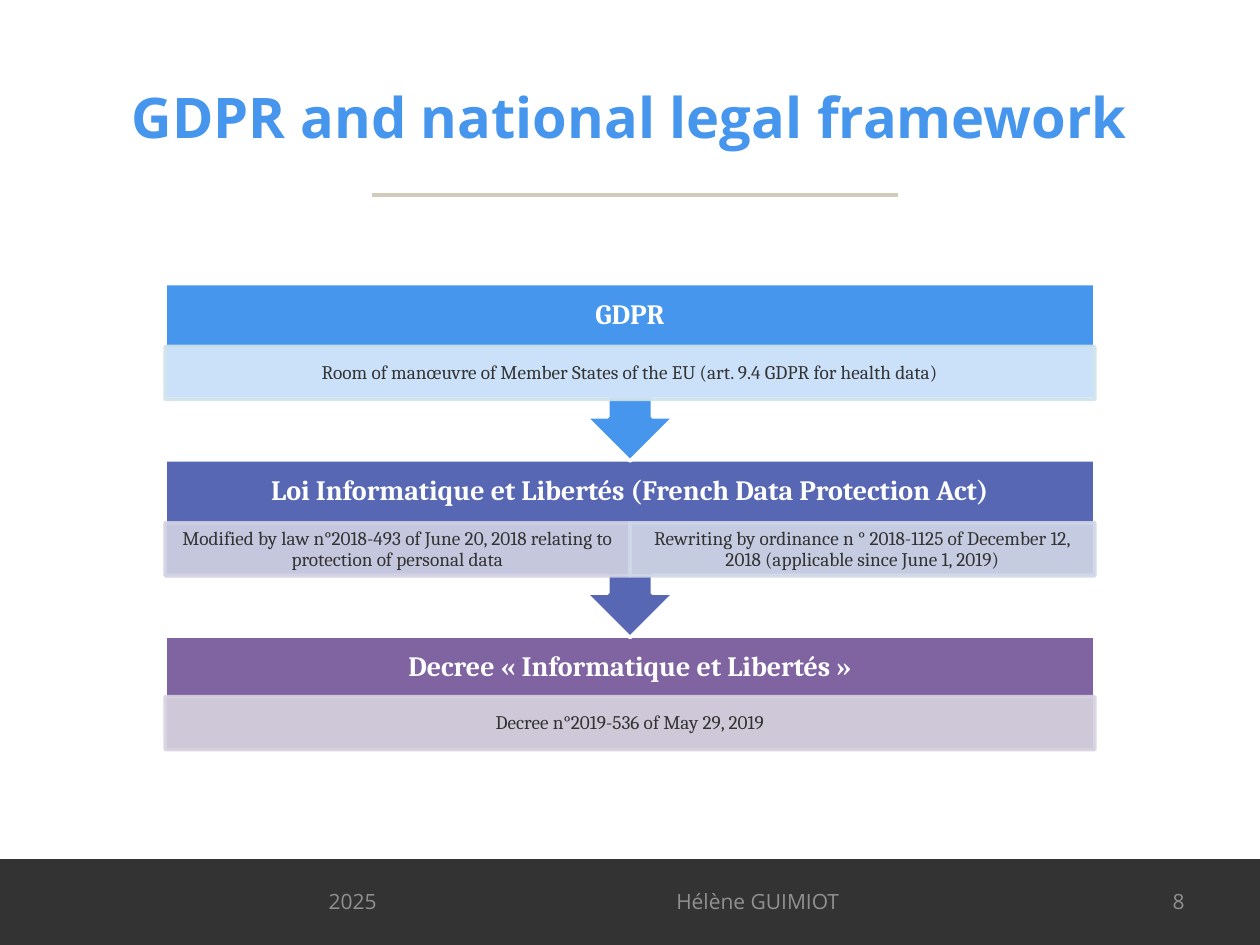
from dataclasses import dataclass

from lxml import etree
from pptx import Presentation
from pptx.dml.color import RGBColor
from pptx.enum.shapes import MSO_CONNECTOR, MSO_SHAPE
from pptx.enum.text import MSO_ANCHOR, PP_ALIGN
from pptx.oxml.ns import qn
from pptx.util import Pt

RECTANGLE = MSO_SHAPE.RECTANGLE
CALLOUT = MSO_SHAPE.UP_ARROW_CALLOUT
STRAIGHT = MSO_CONNECTOR.STRAIGHT
MIDDLE = MSO_ANCHOR.MIDDLE
LEFT, CENTER, RIGHT = PP_ALIGN.LEFT, PP_ALIGN.CENTER, PP_ALIGN.RIGHT


@dataclass(frozen=True)
class Theme:
    heading_font: str = "Open Sans"
    body_font: str = "Cambria"
    title_size: int = 32
    band_size: int = 16
    detail_size: int = 11
    footer_size: int = 12
    title: str = "4596EC"
    white: str = "FFFFFF"
    dark: str = "333333"
    muted: str = "909090"
    rule: str = "D1CCB9"
    gdpr: str = "4596EC"
    law: str = "5767B4"
    decree: str = "8064A2"
    gdpr_strip: str = "DAEAFB"
    gdpr_edge: str = "D0E3EA"
    law_strip: str = "D2D2E4"
    ordinance_strip: str = "D1D8E7"
    decree_strip: str = "D8D3E0"
    strip_opacity: int = 90


THEME = Theme()
BAND_LEFT, BAND_WIDTH = 94.32, 531.36
BAND_TOP, BAND_STEP = 162, 100.8
CALLOUT_HEIGHT, DECREE_HEIGHT = 101.5, 66.2
HEADING_HEIGHT, STRIP_HEIGHT = 36, 30.24

LEVELS = [
    ("GDPR", THEME.gdpr, 36, [
        ("Room of manœuvre of Member States of the EU (art. 9.4 GDPR for health data)",
         THEME.gdpr_strip, THEME.gdpr_edge)]),
    ("Loi Informatique et Libertés (French Data Protection Act)", THEME.law, 36, [
        ("Modified by law n°2018-493 of June 20, 2018 relating to protection of personal data",
         THEME.law_strip, THEME.law_strip),
        ("Rewriting by ordinance n ° 2018-1125 of December 12, 2018 (applicable since June 1, 2019)",
         THEME.ordinance_strip, THEME.ordinance_strip)]),
    ("Decree « Informatique et Libertés »", THEME.decree, 34.5, [
        ("Decree n°2019-536 of May 29, 2019", THEME.decree_strip, THEME.decree_strip)]),
]

FOOTERS = [
    ("8", 516.24, 167.76, RIGHT),
    ("2025", 180.72, 167.76, LEFT),
    ("Hélène GUIMIOT", 318.96, 228.24, CENTER),
]


def write(shape, text, font, size, color, bold=False, align=CENTER,
          insets=(7.2, 3.6), spacing=None):
    frame = shape.text_frame
    frame.word_wrap = True
    frame.vertical_anchor = MIDDLE
    frame.margin_left = frame.margin_right = Pt(insets[0])
    frame.margin_top = frame.margin_bottom = Pt(insets[1])
    frame.text = text
    paragraph = frame.paragraphs[0]
    paragraph.alignment = align
    paragraph.line_spacing = spacing
    run_font = paragraph.runs[0].font
    run_font.name, run_font.size, run_font.bold = font, Pt(size), bold
    run_font.color.rgb = RGBColor.from_string(color)


def add_text(slide, box, text, font, size, color, **options):
    shape = slide.shapes.add_textbox(*map(Pt, box))
    write(shape, text, font, size, color, **options)


def add_block(slide, kind, box, fill, edge=None):
    shape = slide.shapes.add_shape(kind, *map(Pt, box))
    shape.shadow.inherit = False
    shape.fill.solid()
    shape.fill.fore_color.rgb = RGBColor.from_string(fill)
    if edge:
        shape.line.color.rgb = RGBColor.from_string(edge)
        shape.line.width = Pt(2)
    else:
        shape.line.fill.background()
    return shape


def set_opacity(shape, percent):
    for color in shape.element.spPr.iter(qn("a:srgbClr")):
        etree.SubElement(color, qn("a:alpha")).set("val", str(percent * 1000))


def add_rule(slide, left, right, y):
    rule = slide.shapes.add_connector(STRAIGHT, Pt(left), Pt(y), Pt(right), Pt(y))
    rule.line.color.rgb = RGBColor.from_string(THEME.rule)
    rule.line.width = Pt(2.25)
    etree.SubElement(rule.element.spPr, qn("a:effectLst"))


def add_level(slide, index):
    heading, fill, strip_offset, details = LEVELS[index]
    top = BAND_TOP + index * BAND_STEP
    is_last = index == len(LEVELS) - 1
    kind, height = (RECTANGLE, DECREE_HEIGHT) if is_last else (CALLOUT, CALLOUT_HEIGHT)
    band = add_block(slide, kind, (BAND_LEFT, top, BAND_WIDTH, height), fill, THEME.white)
    if not is_last:
        band.rotation = 180
    add_text(slide, (BAND_LEFT, top, BAND_WIDTH, HEADING_HEIGHT), heading,
             THEME.body_font, THEME.band_size, THEME.white,
             bold=True, insets=(8.64, 8.64), spacing=0.9)
    width = BAND_WIDTH / len(details)
    for column, (text, strip_fill, edge) in enumerate(details):
        box = (BAND_LEFT + column * width, top + strip_offset, width, STRIP_HEIGHT)
        strip = add_block(slide, RECTANGLE, box, strip_fill, edge)
        set_opacity(strip, THEME.strip_opacity)
        write(strip, text, THEME.body_font, THEME.detail_size, THEME.dark,
              insets=(6.48, 1.44), spacing=0.9)


def main():
    presentation = Presentation()
    presentation.slide_width, presentation.slide_height = Pt(720), Pt(540)
    slide = presentation.slides.add_slide(presentation.slide_layouts[6])
    add_block(slide, RECTANGLE, (0, 491, 720, 49), THEME.dark)
    add_rule(slide, 212.4, 513.36, 111.6)
    add_text(slide, (36, 21.6, 648, 90), "GDPR and national legal framework",
             THEME.heading_font, THEME.title_size, THEME.title, bold=True)
    for index in reversed(range(len(LEVELS))):
        add_level(slide, index)
    for text, left, width, align in FOOTERS:
        add_text(slide, (left, 500.4, width, 28.8), text, THEME.heading_font,
                 THEME.footer_size, THEME.muted, align=align)
    presentation.save("out.pptx")


if __name__ == "__main__":
    main()
